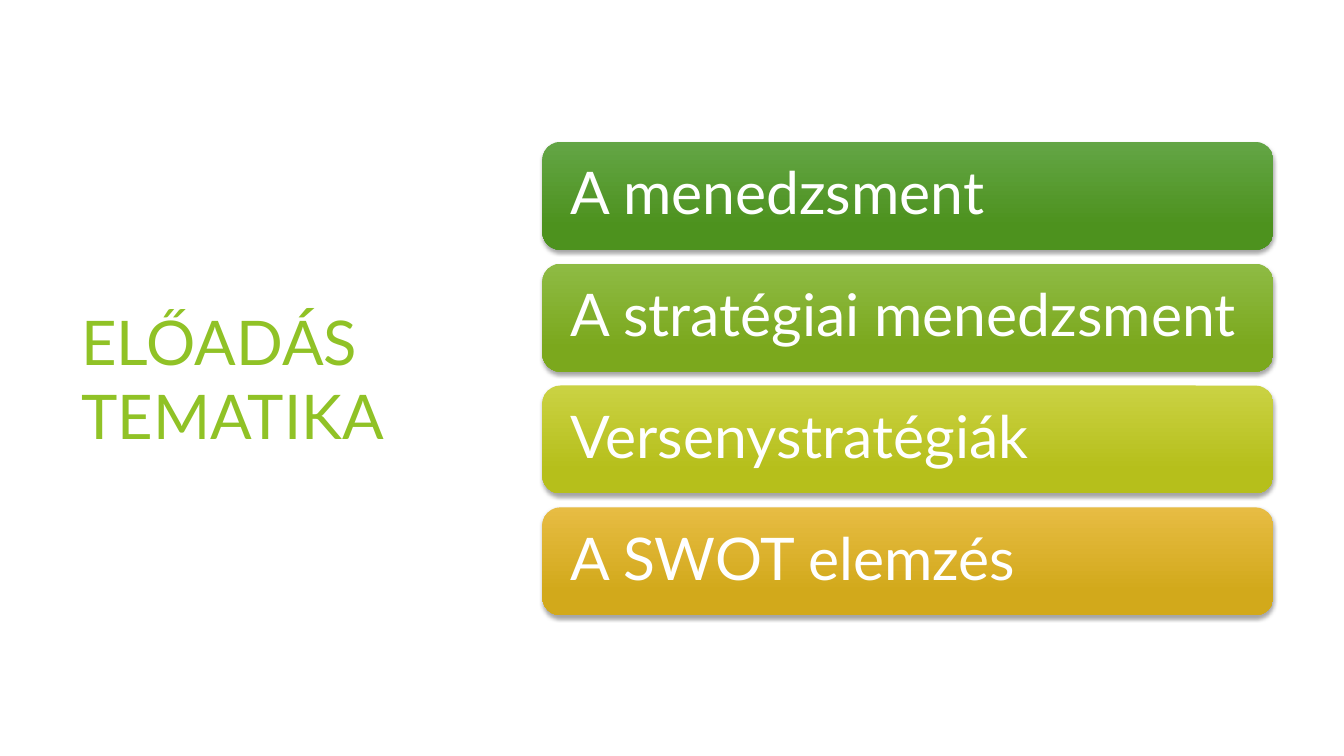
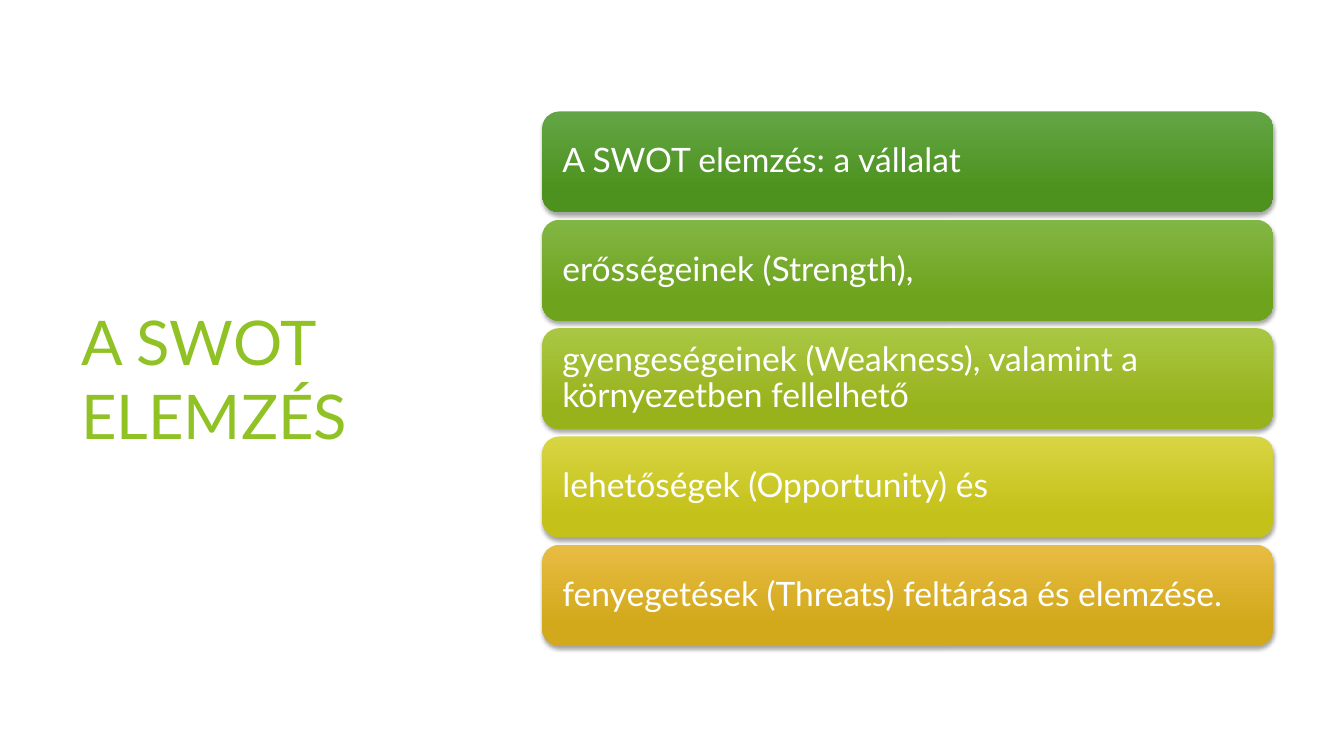
"""Build two slides, each with a title beside a stack of gradient bars."""
from lxml.etree import SubElement
from pptx import Presentation
from pptx.dml.color import RGBColor
from pptx.enum.shapes import MSO_SHAPE
from pptx.enum.text import MSO_ANCHOR, PP_ALIGN
from pptx.oxml.ns import qn
from pptx.util import Cm, Pt

FONT = "Lato"
TITLE_GREEN = RGBColor(0x90, 0xC2, 0x26)
WHITE = RGBColor(0xFF, 0xFF, 0xFF)
FOREST = (RGBColor(0x63, 0xA5, 0x45), RGBColor(0x4D, 0x92, 0x1E))
GRASS = (RGBColor(0x82, 0xB6, 0x44), RGBColor(0x6E, 0xA3, 0x1D))
LEAF = (RGBColor(0x8E, 0xBB, 0x44), RGBColor(0x7B, 0xA8, 0x1D))
LIME = (RGBColor(0xAA, 0xC7, 0x44), RGBColor(0x97, 0xB3, 0x1C))
OLIVE = (RGBColor(0xCA, 0xD2, 0x43), RGBColor(0xB6, 0xBF, 0x1B))
LEMON = (RGBColor(0xD8, 0xD5, 0x43), RGBColor(0xC4, 0xC1, 0x1A))
AMBER = (RGBColor(0xE7, 0xBC, 0x43), RGBColor(0xD2, 0xA9, 0x1B))

BAR_LEFT, BAR_WIDTH = 13.67, 18.42
STACK_CENTER = 9.54

TOPICS = [
    ("A menedzsment", FOREST),
    ("A stratégiai menedzsment", LEAF),
    ("Versenystratégiák", OLIVE),
    ("A SWOT elemzés", AMBER),
]
SWOT = [
    ("A SWOT elemzés: a vállalat", FOREST),
    ("erősségeinek (Strength),", GRASS),
    ("gyengeségeinek (Weakness), valamint a környezetben fellelhető", LIME),
    ("lehetőségek (Opportunity) és", LEMON),
    ("fenyegetések (Threats) feltárása és elemzése.", AMBER),
]


def set_text(sp, text, size, color):
    tf = sp.text_frame
    tf.word_wrap = True
    tf.vertical_anchor = MSO_ANCHOR.MIDDLE
    p = tf.paragraphs[0]
    p.text = text
    p.alignment = PP_ALIGN.LEFT
    p.font.name = FONT
    p.font.size = Pt(size)
    p.font.color.rgb = color
    return tf


def add_shadow(sp):
    sp.shadow.inherit = False
    effects = sp.element.spPr.find(qn("a:effectLst"))
    shadow = SubElement(effects, qn("a:outerShdw"), blurRad=str(Pt(3)),
                        dist=str(Pt(2)), dir="5400000", rotWithShape="0")
    color = SubElement(shadow, qn("a:srgbClr"), val="000000")
    SubElement(color, qn("a:alpha"), val="35000")


def add_title(s, text):
    sp = s.shapes.add_textbox(Cm(1.8), Cm(3.84), Cm(9.86), Cm(11.38))
    set_text(sp, text, 44, TITLE_GREEN)


def add_bar(s, top, height, text, colors, size, margin):
    sp = s.shapes.add_shape(MSO_SHAPE.ROUNDED_RECTANGLE, Cm(BAR_LEFT), Cm(top),
                            Cm(BAR_WIDTH), Cm(height))
    sp.fill.gradient()
    sp.fill.gradient_angle = 270
    for stop, position, color in zip(sp.fill.gradient_stops, (0, 0.78), colors):
        stop.position = position
        stop.color.rgb = color
    sp.line.fill.background()
    add_shadow(sp)
    tf = set_text(sp, text, size, WHITE)
    tf.paragraphs[0].line_spacing = 0.9
    tf.margin_left = tf.margin_right = Cm(margin)
    tf.margin_top = tf.margin_bottom = Cm(margin)


def add_stack(s, bars, height, gap, size, margin):
    pitch = height + gap
    top = STACK_CENTER - (len(bars) * pitch - gap) / 2
    for i, (text, colors) in enumerate(bars):
        add_bar(s, top + i * pitch, height, text, colors, size, margin)


def add_slide(prs, title, bars, **style):
    s = prs.slides.add_slide(prs.slide_layouts[6])
    add_title(s, title)
    add_stack(s, bars, **style)


def main():
    prs = Presentation()
    prs.slide_width, prs.slide_height = Cm(33.87), Cm(19.05)
    add_slide(prs, "ELŐADÁS TEMATIKA", TOPICS,
              height=2.72, gap=0.35, size=42, margin=0.57)
    add_slide(prs, "A SWOT ELEMZÉS", SWOT,
              height=2.54, gap=0.19, size=24, margin=0.38)
    prs.save("out.pptx")


if __name__ == "__main__":
    main()
